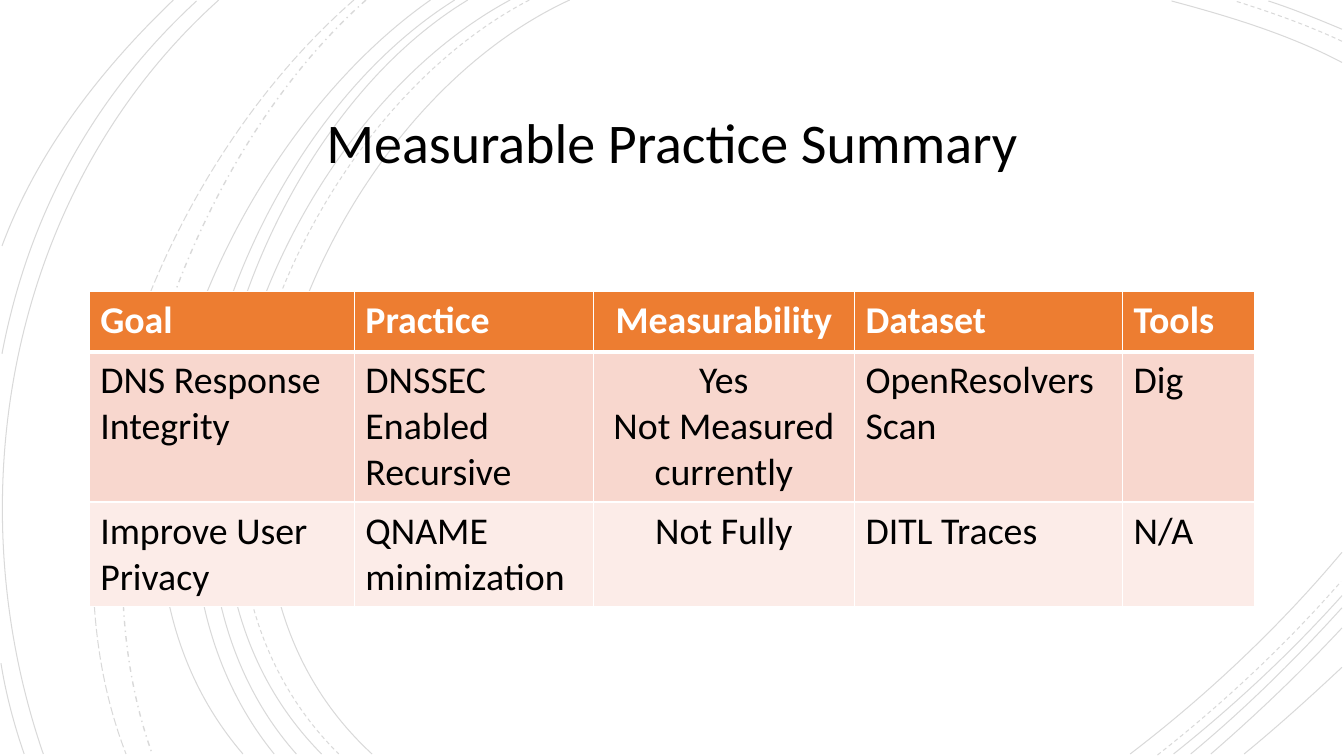
from dataclasses import dataclass

from lxml.etree import SubElement
from pptx import Presentation
from pptx.dml.color import RGBColor
from pptx.enum.dml import MSO_LINE
from pptx.enum.text import MSO_ANCHOR, MSO_AUTO_SIZE, PP_ALIGN
from pptx.oxml.ns import qn
from pptx.util import Inches, Pt

TITLE = "Measurable Practice Summary"
HEADINGS = ["Goal", "Practice", "Measurability", "Dataset", "Tools"]
PRACTICES = [
    ["DNS Response Integrity", "DNSSEC Enabled\nRecursive",
     "Yes\nNot Measured\ncurrently", "OpenResolvers Scan", "Dig"],
    ["Improve User Privacy", "QNAME minimization", "Not Fully", "DITL Traces", "N/A"],
]
CENTRED_HEADING = "Measurability"
COLUMN_WIDTHS = [2.63, 2.37, 2.59, 2.66, 1.31]
ROW_HEIGHTS = [0.6, 1.49, 1.04]

ARCS = {
    (MSO_LINE.SOLID, 0.75): [
        [(5.65, 0), (3.15, 1.15), (1.43, 5.4), (3.69, 7.48)],
        [(13.31, 0.62), (12.78, 0.34), (12.18, 0.16), (11.62, 0.01)],
        [(11.21, 7.48), (11.97, 6.9), (12.69, 6.22), (13.31, 5.48)],
        [(5.06, 0), (2.7, 1.27), (1.1, 5.37), (3.19, 7.48)],
        [(13.31, 0.29), (13.07, 0.19), (12.83, 0.09), (12.58, 0.01)],
        [(11.64, 7.48), (12.23, 7.01), (12.8, 6.48), (13.31, 5.91)],
        [(4.64, 0), (2.44, 1.33), (1.1, 5.41), (2.94, 7.48)],
        [(11.81, 7.48), (12.34, 7.04), (12.84, 6.55), (13.31, 6.03)],
        [(4.51, 0), (2.31, 1.38), (0.97, 5.33), (2.72, 7.48)],
        [(12.01, 7.48), (12.46, 7.09), (12.9, 6.67), (13.31, 6.23)],
        [(4.27, 0), (2.17, 1.47), (0.53, 5.29), (2.41, 7.48)],
        [(12.34, 7.48), (12.67, 7.21), (12.99, 6.92), (13.31, 6.62)],
        [(2.17, 0), (0.11, 1.85), (-0.46, 4.9), (0.43, 7.48)],
        [(1.95, 0.01), (0.92, 0.96), (0.28, 2.14), (0.02, 3.51)],
        [(0.01, 6.58), (0.06, 6.89), (0.14, 7.19), (0.24, 7.48)],
        [(1.72, 0), (1, 0.69), (0.37, 1.5), (0.02, 2.44)],
    ],
    (MSO_LINE.DASH, 0.75): [
        [(5.25, 0), (2.85, 1.25), (1.23, 5.37), (3.36, 7.48)],
        [(13.31, 0.41), (12.97, 0.25), (12.6, 0.12), (12.25, 0.01)],
        [(11.48, 7.49), (12.13, 6.98), (12.75, 6.4), (13.3, 5.77)],
    ],
    (MSO_LINE.DASH_DOT, 1): [[(3.63, 0), (1.76, 1.66), (0.65, 5.09), (1.51, 7.48)]],
    (MSO_LINE.LONG_DASH, 0.75): [[(3.51, 0), (1.57, 1.69), (0.29, 4.99), (1.25, 7.48)]],
}


@dataclass(frozen=True)
class Theme:
    font: str = "Calibri"
    title_size: int = 40
    table_size: int = 27
    ink: str = "000000"
    paper: str = "FFFFFF"
    header: str = "ED7D31"
    bands: tuple = ("F8D7CE", "FCECE8")
    arc_opacity: int = 15
    rule: int = 1
    header_rule: int = 3


THEME = Theme()


def colour(code):
    return RGBColor.from_string(code)


def style(paragraph, size, code, bold, alignment):
    paragraph.alignment = alignment
    paragraph.font.name = THEME.font
    paragraph.font.size = Pt(size)
    paragraph.font.bold = bold
    paragraph.font.color.rgb = colour(code)


def draw_arc(group, points, dash, weight):
    start, *rest = [(Inches(x), Inches(y)) for x, y in points]
    builder = group.shapes.build_freeform(*start, scale=1.0)
    builder.add_line_segments(rest, close=False)
    arc = builder.convert_to_shape()
    arc.shadow.inherit = False
    arc.fill.background()
    arc.line.color.rgb = colour(THEME.ink)
    arc.line.width = Pt(weight)
    arc.line.dash_style = dash
    ink = arc.line._ln.find(".//" + qn("a:srgbClr"))
    SubElement(ink, qn("a:alpha"), val=str(THEME.arc_opacity * 1000))
    segments = list(arc._element.iter(qn("a:lnTo")))
    curve = SubElement(segments[0].getparent(), qn("a:cubicBezTo"))
    for segment in segments:
        curve.append(segment[0])
        segment.getparent().remove(segment)


def draw_borders(cell, row):
    weights = {"L": THEME.rule, "R": THEME.rule,
               "T": THEME.header_rule if row == 1 else THEME.rule,
               "B": THEME.header_rule if row == 0 else THEME.rule}
    properties = cell._tc.get_or_add_tcPr()
    for side, weight in weights.items():
        border = SubElement(properties, qn(f"a:ln{side}"), w=str(Pt(weight)))
        SubElement(SubElement(border, qn("a:solidFill")), qn("a:srgbClr"), val=THEME.paper)


def fill_cell(cell, row, heading, content):
    draw_borders(cell, row)
    cell.fill.solid()
    cell.fill.fore_color.rgb = colour(THEME.bands[(row - 1) % 2] if row else THEME.header)
    cell.margin_left = cell.margin_right = Inches(0.11)
    cell.margin_top = cell.margin_bottom = Inches(0.06)
    cell.text_frame.text = content
    alignment = PP_ALIGN.CENTER if heading == CENTRED_HEADING else PP_ALIGN.LEFT
    for paragraph in cell.text_frame.paragraphs:
        style(paragraph, THEME.table_size, THEME.ink if row else THEME.paper,
              row == 0, alignment)


def add_title(slide, slide_width):
    title = slide.shapes.title
    title.width, title.height = Inches(9.49), Inches(1.15)
    title.left, title.top = (slide_width - title.width) // 2, Inches(0.87)
    frame = title.text_frame
    frame.text = TITLE
    frame.word_wrap = True
    frame.auto_size = MSO_AUTO_SIZE.NONE
    frame.vertical_anchor = MSO_ANCHOR.MIDDLE
    heading = frame.paragraphs[0]
    heading.line_spacing = 0.9
    style(heading, THEME.title_size, THEME.ink, False, PP_ALIGN.CENTER)


def add_summary(slide, slide_width):
    width, height = Inches(sum(COLUMN_WIDTHS)), Inches(sum(ROW_HEIGHTS))
    summary = slide.shapes.add_table(
        len(ROW_HEIGHTS), len(COLUMN_WIDTHS),
        (slide_width - width) // 2, Inches(2.89), width, height).table
    for column, column_width in zip(summary.columns, COLUMN_WIDTHS):
        column.width = Inches(column_width)
    for row, row_height in zip(summary.rows, ROW_HEIGHTS):
        row.height = Inches(row_height)
    for row, contents in enumerate([HEADINGS, *PRACTICES]):
        for column, content in enumerate(contents):
            fill_cell(summary.cell(row, column), row, HEADINGS[column], content)


def main():
    deck = Presentation()
    deck.slide_width, deck.slide_height = Inches(13.33), Inches(7.5)
    slide = deck.slides.add_slide(deck.slide_layouts[5])
    slide.background.fill.solid()
    slide.background.fill.fore_color.rgb = colour(THEME.paper)

    backdrop = slide.shapes.add_group_shape()
    for (dash, weight), arcs in ARCS.items():
        for points in arcs:
            draw_arc(backdrop, points, dash, weight)
    slide.shapes.title._element.addprevious(backdrop._element)

    add_title(slide, deck.slide_width)
    add_summary(slide, deck.slide_width)
    deck.save("out.pptx")


if __name__ == "__main__":
    main()
